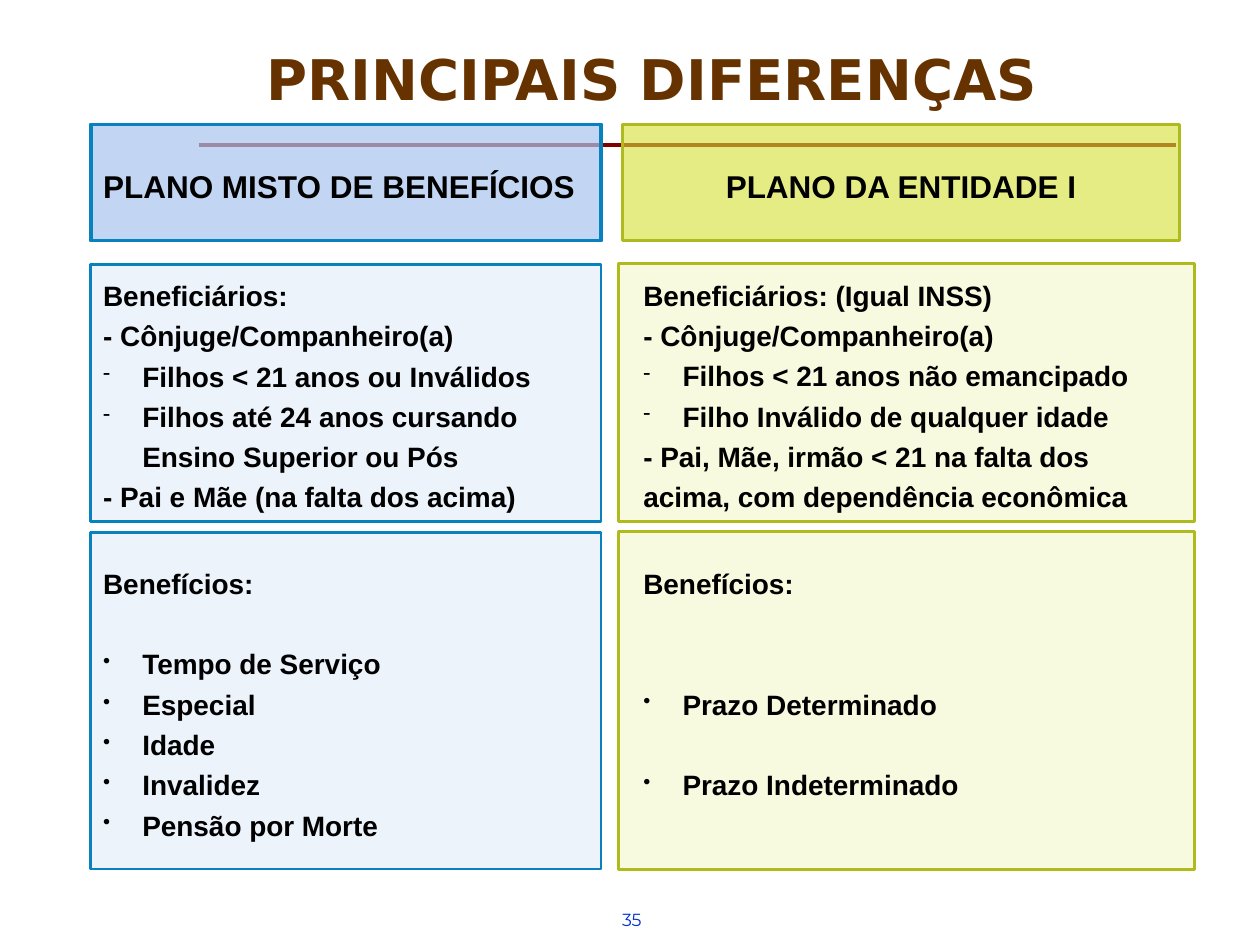
from dataclasses import dataclass

from lxml import etree
from pptx import Presentation
from pptx import util as u
from pptx.dml.color import RGBColor
from pptx.enum import shapes, text
from pptx.oxml.ns import qn


@dataclass(frozen=True)
class Theme:
    font: str = "Arial"
    title_font: str = "DejaVu Sans"
    number_font: str = "Montserrat"
    ink: str = "000000"
    title: str = "663300"
    rule: str = "800000"
    number: str = "0033CC"
    blue: str = "A9C5EF"
    blue_edge: str = "0782BF"
    lime: str = "D4E033"
    pale_lime: str = "EEF3AF"
    lime_edge: str = "AFBA1C"
    title_pt: int = 32
    header_pt: int = 18
    body_pt: int = 16
    number_pt: int = 10
    line_pt: int = 23


@dataclass(frozen=True)
class Line:
    text: str
    bullet: str = ""
    gap: int = 0  # empty lines above


@dataclass(frozen=True)
class Panel:
    box: tuple[float, float, float, float]
    fill: str
    opacity: int
    edge: str
    lines: tuple[Line, ...]
    indent: float = 0
    header: bool = False
    centred: bool = False
    gap_below: float = 0


T = Theme()
HANGING = 0.79
LEFT, LEFT_W = 1.83, 10.29
RIGHT, RIGHT_W = 12.47, 11.61
HEADER_TOP, HEADER_H = 2.51, 2.34

PANELS = (
    Panel((LEFT, HEADER_TOP, LEFT_W, HEADER_H), T.blue, 70, T.blue_edge,
          (Line("PLANO MISTO DE BENEFÍCIOS"),), header=True),
    Panel((12.55, HEADER_TOP, 11.23, HEADER_H), T.lime, 60, T.lime_edge,
          (Line("PLANO DA ENTIDADE I"),), header=True, centred=True),
    Panel((RIGHT, 5.31, RIGHT_W, 5.21), T.pale_lime, 40, T.lime_edge, (
        Line("Beneficiários: (Igual INSS)"),
        Line("- Cônjuge/Companheiro(a)"),
        Line("Filhos < 21 anos não emancipado", "-"),
        Line("Filho Inválido de qualquer idade", "-"),
        Line("- Pai, Mãe, irmão < 21 na falta dos acima, com dependência econômica"),
    ), indent=0.25),
    Panel((LEFT, 5.33, LEFT_W, 5.18), T.blue, 20, T.blue_edge, (
        Line("Beneficiários:"),
        Line("- Cônjuge/Companheiro(a)"),
        Line("Filhos < 21 anos ou Inválidos", "-"),
        Line("Filhos até 24 anos cursando Ensino Superior ou Pós", "-"),
        Line("- Pai e Mãe (na falta dos acima)"),
    )),
    Panel((LEFT, 10.74, LEFT_W, 6.78), T.blue, 20, T.blue_edge, (
        Line("Benefícios:"),
        Line("Tempo de Serviço", "•", gap=1),
        Line("Especial", "•"),
        Line("Idade", "•"),
        Line("Invalidez", "•"),
        Line("Pensão por Morte", "•"),
    )),
    Panel((RIGHT, 10.72, RIGHT_W, 6.81), T.pale_lime, 40, T.lime_edge, (
        Line("Benefícios:"),
        Line("Prazo Determinado", "•", gap=2),
        Line("Prazo Indeterminado", "•", gap=1),
    ), indent=0.25, gap_below=0.81),
)


def style_runs(p, font: str, size: int, color: str, bold: bool = True) -> None:
    for r in p.runs:
        r.font.name = font
        r.font.size = u.Pt(size)
        r.font.bold = bold
        r.font.color.rgb = RGBColor.from_string(color)


def indent_paragraph(p, indent: float, bullet: str) -> None:
    """Set the left margin and, for a bullet, its hanging indent and mark."""
    pPr = p._p.get_or_add_pPr()
    pPr.set("marL", str(u.Cm(indent + (HANGING if bullet else 0))))
    pPr.set("indent", str(-u.Cm(HANGING) if bullet else 0))
    if bullet:
        etree.SubElement(pPr, qn("a:buSzPct"), val="75000")
        etree.SubElement(pPr, qn("a:buChar"), char=bullet)


def add_panel(s, panel: Panel) -> None:
    sp = s.shapes.add_shape(shapes.MSO_SHAPE.RECTANGLE, *map(u.Cm, panel.box))
    sp.shadow.inherit = False
    sp.fill.solid()
    sp.fill.fore_color.rgb = RGBColor.from_string(panel.fill)
    color = sp._element.spPr.find(qn("a:solidFill"))[0]
    etree.SubElement(color, qn("a:alpha"), val=str(panel.opacity * 1000))
    sp.line.color.rgb = RGBColor.from_string(panel.edge)
    sp.line.width = u.Pt(2.25 if panel.header else 1.5)

    tf = sp.text_frame
    tf.word_wrap = True
    tf.vertical_anchor = text.MSO_ANCHOR.MIDDLE
    tf.margin_bottom = u.Cm(0.13 + panel.gap_below)
    for i, line in enumerate(panel.lines):
        p = tf.add_paragraph() if i else tf.paragraphs[0]
        p.text = line.text
        indent_paragraph(p, panel.indent, line.bullet)
        p.alignment = text.PP_ALIGN.CENTER if panel.centred else text.PP_ALIGN.LEFT
        p.line_spacing = 1.2
        if line.gap:
            p.space_before = u.Pt(line.gap * T.line_pt)
        style_runs(p, T.font, T.header_pt if panel.header else T.body_pt, T.ink)


def add_rule(s) -> None:
    y = u.Cm(2.92)
    rule = s.shapes.add_connector(
        shapes.MSO_CONNECTOR.STRAIGHT, u.Cm(4.01), y, u.Cm(23.7), y)
    rule.line.color.rgb = RGBColor.from_string(T.rule)
    rule.line.width = u.Pt(2)
    etree.SubElement(rule._element.spPr, qn("a:effectLst"))


def add_title(s) -> None:
    tf = s.shapes.add_textbox(u.Cm(0.89), u.Cm(0.33), u.Cm(24.51), u.Cm(1.91)).text_frame
    tf.word_wrap = True
    tf.vertical_anchor = text.MSO_ANCHOR.BOTTOM
    tf.margin_left = tf.margin_top = tf.margin_right = tf.margin_bottom = 0
    p = tf.paragraphs[0]
    p.text = "PRINCIPAIS DIFERENÇAS"
    p.alignment = text.PP_ALIGN.CENTER
    p.line_spacing = 0.8
    style_runs(p, T.title_font, T.title_pt, T.title)


def add_slide_number(s) -> None:
    tf = s.shapes.add_textbox(u.Cm(12.29), u.Cm(18.19), u.Cm(1.8), u.Cm(0.86)).text_frame
    tf.word_wrap = True
    tf.text = "35"
    style_runs(tf.paragraphs[0], T.number_font, T.number_pt, T.number, bold=False)


def main() -> None:
    prs = Presentation()
    prs.slide_width, prs.slide_height = u.Cm(25.4), u.Cm(19.05)
    s = prs.slides.add_slide(prs.slide_layouts[6])
    add_rule(s)
    add_slide_number(s)
    add_title(s)
    for panel in PANELS:
        add_panel(s, panel)
    prs.save("out.pptx")


if __name__ == "__main__":
    main()
